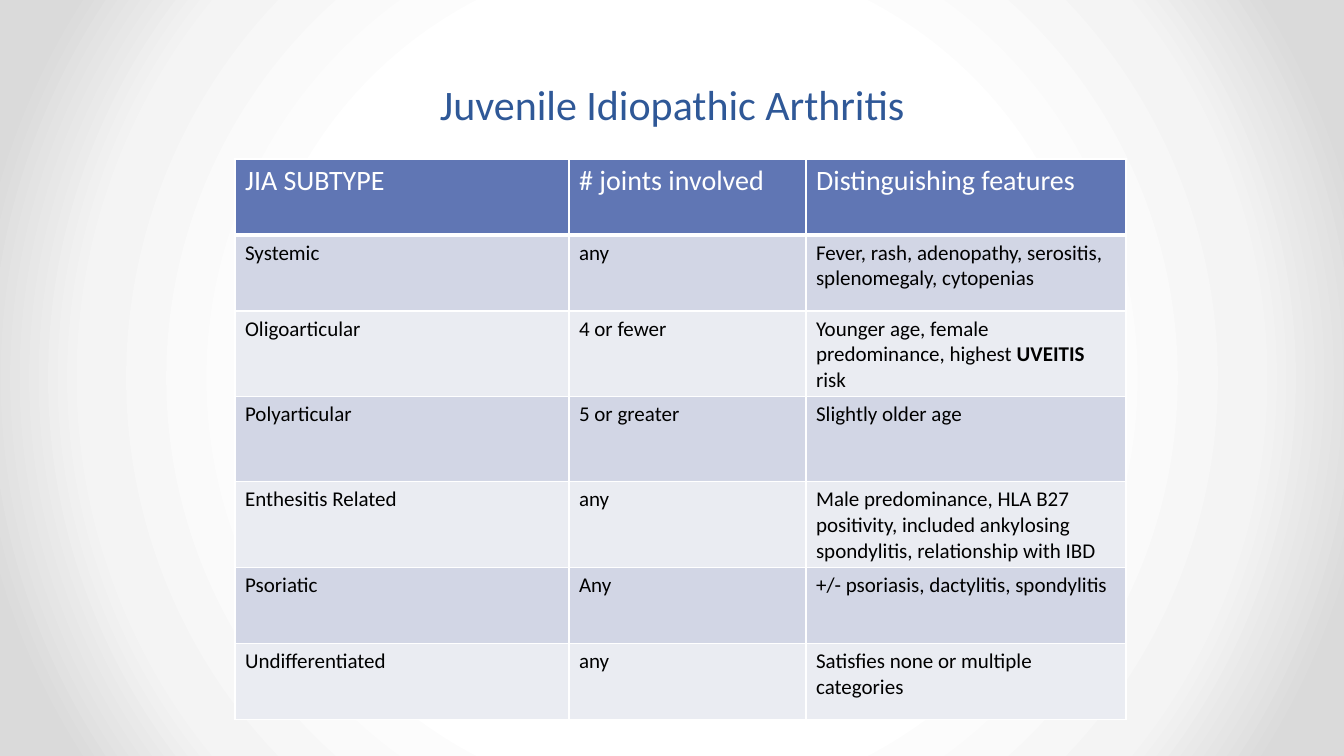
from lxml.etree import SubElement
from pptx import Presentation
from pptx.dml.color import RGBColor as RGB
from pptx.enum.text import MSO_ANCHOR as ANCHOR, PP_ALIGN as ALIGN
from pptx.oxml.ns import qn
from pptx.util import Pt

TITLE = "Juvenile Idiopathic Arthritis"
HEADER = ("JIA SUBTYPE", "# joints involved", "Distinguishing features")
SUBTYPES = [
    ("Systemic", "any", "Fever, rash, adenopathy, serositis, splenomegaly, cytopenias"),
    ("Oligoarticular", "4 or fewer",
     ("Younger age, female predominance, highest ", "UVEITIS", " risk")),
    ("Polyarticular", "5 or greater", "Slightly older age"),
    ("Enthesitis Related", "any",
     "Male predominance, HLA B27 positivity, included ankylosing spondylitis, "
     "relationship with IBD"),
    ("Psoriatic", "Any", "+/- psoriasis, dactylitis, spondylitis"),
    ("Undifferentiated", "any", "Satisfies none or multiple categories"),
]
BOLD_WORD = "UVEITIS"

WIDTH, HEIGHT = 1344, 756
TITLE_BOX = (219, 58, 907, 76)
TABLE_LEFT, TABLE_TOP = 235, 159
COLUMNS = (334, 237, 320)
ROWS = (76, 76, 76, 85, 76, 76, 76)

FONT = "Calibri"
TITLE_BLUE = RGB(0x2F, 0x58, 0x97)
HEADER_BLUE = RGB(0x60, 0x76, 0xB4)
BANDS = (RGB(0xD2, 0xD6, 0xE5), RGB(0xEA, 0xEC, 0xF2))
WHITE = RGB(0xFF, 0xFF, 0xFF)
BLACK = RGB(0, 0, 0)
GLOW = [(50, WHITE), (76, RGB(0xF4, 0xF4, 0xF4)), (92, RGB(0xDA, 0xDA, 0xDA))]


def px(n):
    return round(n * 914400 / 100.8)


def write(tf, text, *, size, color, align=ALIGN.LEFT, spacing=None):
    p = tf.paragraphs[0]
    p.alignment = align
    if spacing:
        p.line_spacing = Pt(spacing)
    for part in (text,) if isinstance(text, str) else text:
        r = p.add_run()
        r.text = part
        r.font.name = FONT
        r.font.size = Pt(size)
        r.font.bold = part == BOLD_WORD
        r.font.color.rgb = color


def solid(parent, color):
    fill = SubElement(parent, qn("a:solidFill"))
    SubElement(fill, qn("a:srgbClr"), val=str(color))


def border(cell, bottom):
    tc_pr = cell._tc.get_or_add_tcPr()
    for side, width in (("L", 1), ("R", 1), ("T", 1), ("B", bottom)):
        solid(SubElement(tc_pr, qn(f"a:ln{side}"), w=str(Pt(width))), WHITE)


def paint_background(s):
    s.background.fill.gradient()
    grad = s.element.find(".//" + qn("a:gradFill"))
    for child in list(grad):
        grad.remove(child)
    stops = SubElement(grad, qn("a:gsLst"))
    for position, color in GLOW:
        stop = SubElement(stops, qn("a:gs"), pos=str(position * 1000))
        SubElement(stop, qn("a:srgbClr"), val=str(color))
    circle = SubElement(grad, qn("a:path"))
    circle.set("path", "circle")
    SubElement(circle, qn("a:fillToRect"), l="50000", t="50000", r="50000", b="50000")


def add_title(s):
    tf = s.shapes.add_textbox(*map(px, TITLE_BOX)).text_frame
    tf.word_wrap = True
    tf.vertical_anchor = ANCHOR.BOTTOM
    write(tf, TITLE, size=30, color=TITLE_BLUE, align=ALIGN.CENTER, spacing=58)


def add_subtypes(s):
    frame = (TABLE_LEFT, TABLE_TOP, sum(COLUMNS), sum(ROWS))
    table = s.shapes.add_table(len(ROWS), len(COLUMNS), *map(px, frame)).table
    table.horz_banding = False
    for column, width in zip(table.columns, COLUMNS):
        column.width = px(width)
    for i, (row, height, texts) in enumerate(zip(table.rows, ROWS, [HEADER] + SUBTYPES)):
        row.height = px(height)
        head = i == 0
        for cell, text in zip(row.cells, texts):
            border(cell, 3 if head else 1)
            cell.fill.solid()
            cell.fill.fore_color.rgb = HEADER_BLUE if head else BANDS[(i - 1) % 2]
            write(cell.text_frame, text, size=20 if head else 15,
                  color=WHITE if head else BLACK)


def main():
    prs = Presentation()
    prs.slide_width, prs.slide_height = px(WIDTH), px(HEIGHT)
    s = prs.slides.add_slide(prs.slide_layouts[6])
    paint_background(s)
    add_title(s)
    add_subtypes(s)
    prs.save("out.pptx")


if __name__ == "__main__":
    main()
